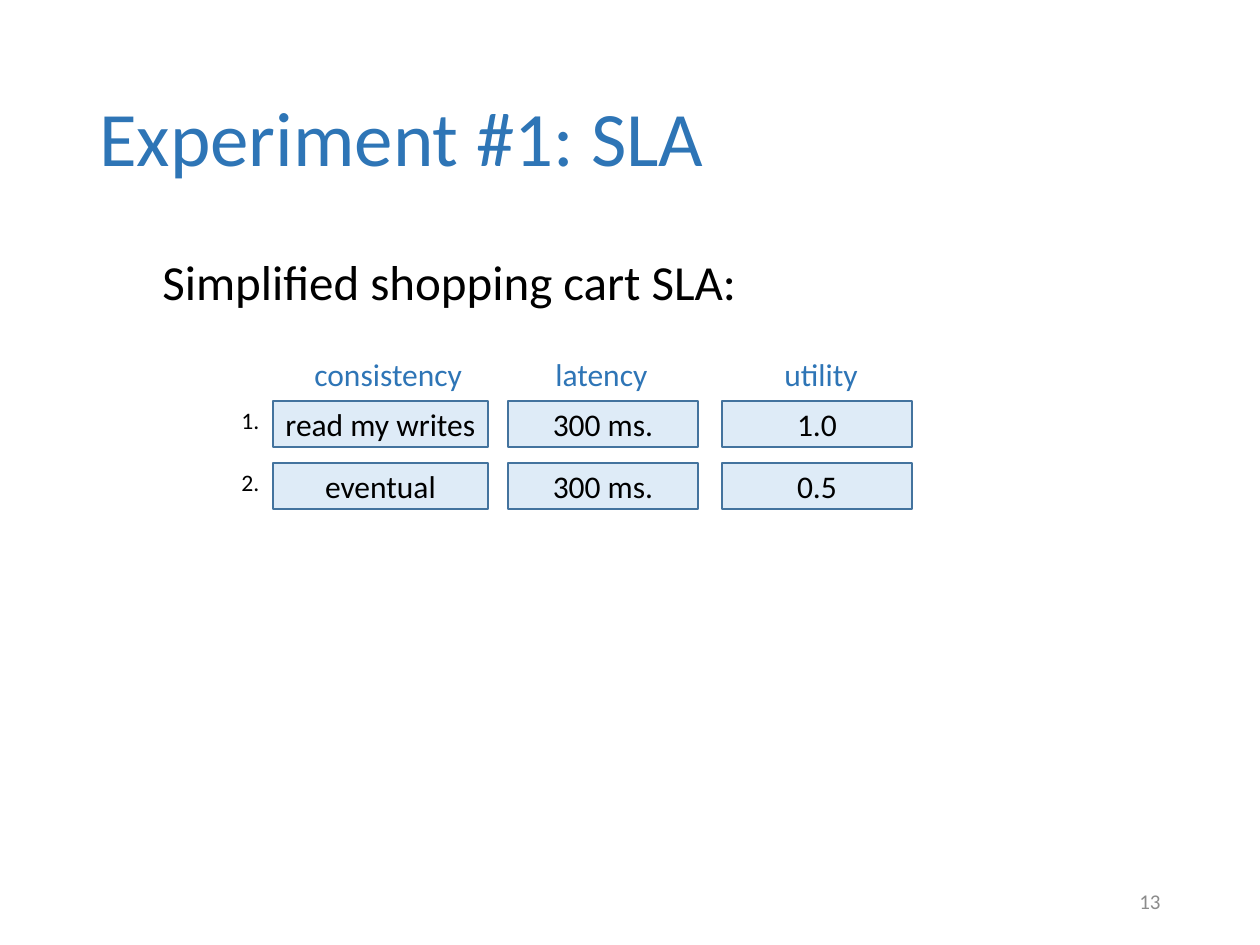
from pptx import Presentation
from pptx.dml.color import RGBColor
from pptx.enum.shapes import MSO_SHAPE as Shape
from pptx.enum.text import MSO_ANCHOR as Anchor, PP_ALIGN as Align
from pptx.util import Emu, Pt

SCALE = 914400 / 126
BLUE, BLACK, GREY = "2E75B6", "000000", "8C8C8C"


def color(code):
    return RGBColor.from_string(code)


def write(box, text, size, ink, wrap=True, anchor=Anchor.TOP, **form):
    frame = box.text_frame
    frame.word_wrap = wrap
    frame.vertical_anchor = anchor
    para = frame.paragraphs[0]
    for name, value in form.items():
        setattr(para, name, value)
    run = para.add_run()
    run.text = text
    run.font.name = "Calibri"
    run.font.size = Pt(size)
    run.font.color.rgb = color(ink)


deck = Presentation()
deck.slide_width = Emu(round(1260 * SCALE))
deck.slide_height = Emu(round(945 * SCALE))
slide = deck.slides.add_slide(deck.slide_layouts[6])
shapes = slide.shapes

labels = [
    ((87, 50, 1086, 183), "Experiment #1: SLA", 44, BLUE,
     {"anchor": Anchor.MIDDLE, "line_spacing": 0.9}),
    ((87, 252, 1086, 600), "\tSimplified shopping cart SLA:", 28, BLACK,
     {"line_spacing": 0.9, "space_before": Pt(10)}),
    ((890, 876, 283, 50), "13", 12, GREY,
     {"anchor": Anchor.MIDDLE, "alignment": Align.RIGHT}),
    ((302, 349, 178, 50), "consistency", 18, BLUE, {}),
    ((543, 349, 118, 50), "latency", 18, BLUE, {"wrap": False}),
    ((772, 349, 102, 50), "utility", 18, BLUE, {"wrap": False}),
]
columns = [(273, 215), (508, 190), (722, 190)]
rows = [("read my writes", "300 ms.", "1.0"), ("eventual", "300 ms.", "0.5")]
top, pitch, height = 401, 62, 46

for i in range(len(rows)):
    spot = (229, top - 1 + i * pitch, 44, 42)
    labels.append((spot, f"{i + 1}.", 13.5, BLACK, {"wrap": False}))

for spot, text, size, ink, form in labels:
    box = shapes.add_textbox(*[Emu(round(n * SCALE)) for n in spot])
    write(box, text, size, ink, **form)

for i, row in enumerate(rows):
    for (left, width), text in zip(columns, row):
        spot = (left, top + i * pitch, width, height)
        cell = shapes.add_shape(Shape.RECTANGLE, *[Emu(round(n * SCALE)) for n in spot])
        cell.shadow.inherit = False
        cell.fill.solid()
        cell.fill.fore_color.rgb = color("DEEBF7")
        cell.line.color.rgb = color("43739E")
        cell.line.width = Pt(1)
        write(cell, text, 18, BLACK, anchor=Anchor.MIDDLE, alignment=Align.CENTER)

deck.save("out.pptx")
